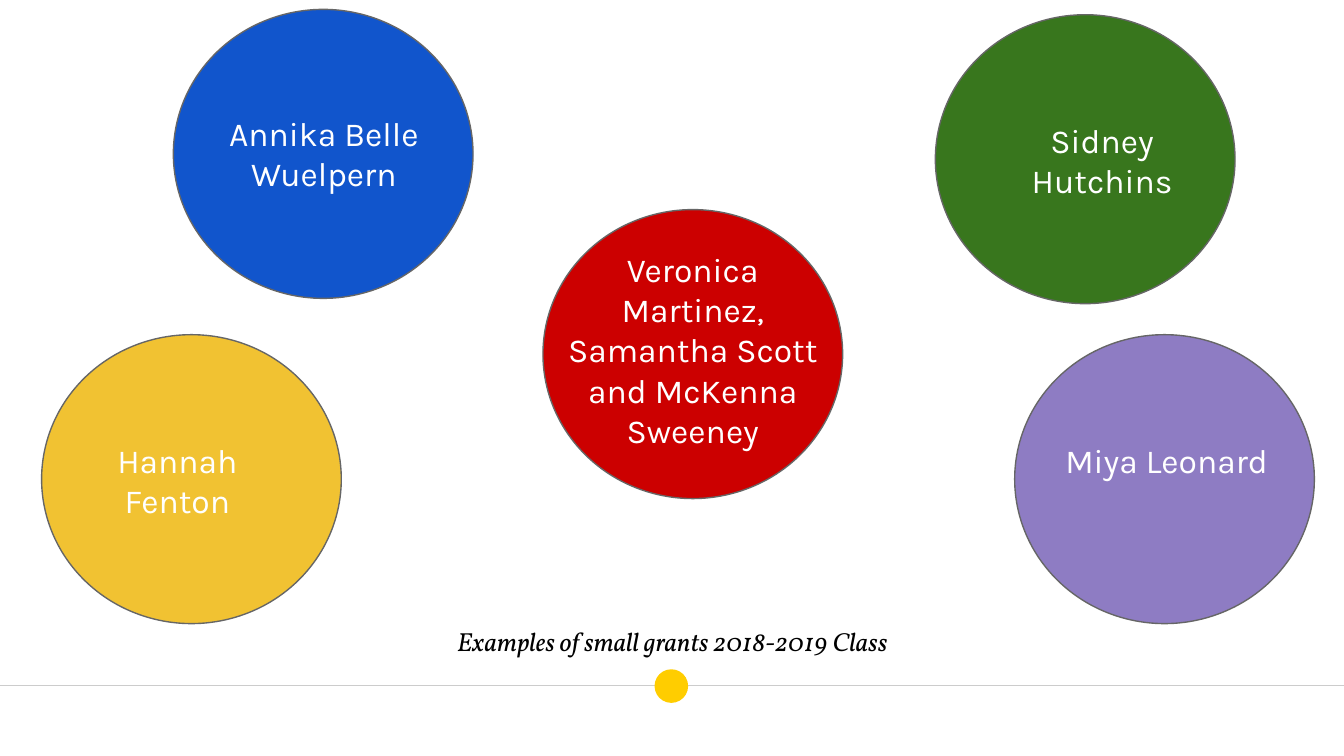
from dataclasses import dataclass

from lxml import etree
from pptx import Presentation
from pptx import util as u
from pptx.dml.color import RGBColor
from pptx.enum import shapes, text
from pptx.oxml import ns

PX = 9144
SLIDE_WIDTH = 1000


@dataclass(frozen=True)
class Theme:
    name_font: str = "Karla"
    caption_font: str = "Vollkorn"
    name_size: int = 18
    caption_size: int = 14
    line_width: float = 0.75
    white: str = "FFFFFF"
    black: str = "000000"
    rule: str = "CCCCCC"
    dot: str = "FFCD00"
    outline: str = "666666"
    blue: str = "1155CC"
    green: str = "38761D"
    red: str = "CC0000"
    yellow: str = "F1C232"
    purple: str = "8E7CC3"


THEME = Theme()
CIRCLE_SIZE = (223, 215)
NAME_SIZE = (172, 80)
GRANTS = [
    ("Annika Belle Wuelpern", THEME.blue, (129, 7), (26, 67), NAME_SIZE, 0),
    ("Sidney Hutchins", THEME.green, (696, 11), (38, 68), NAME_SIZE, 0),
    ("Veronica Martinez, Samantha Scott and McKenna Sweeney",
     THEME.red, (404, 156), (2, 19), (219, 70), 6),
    ("Hannah Fenton", THEME.yellow, (31, 249), (15, 68), NAME_SIZE, 0),
    ("Miya Leonard", THEME.purple, (755, 249), (27, 68), NAME_SIZE, 0),
]


def emu(*lengths):
    return [length * PX for length in lengths]


def color(value):
    return RGBColor.from_string(value)


def add_ellipse(page, box, fill, outline=None):
    ellipse = page.shapes.add_shape(shapes.MSO_SHAPE.OVAL, *emu(*box))
    ellipse.shadow.inherit = False
    ellipse.fill.solid()
    ellipse.fill.fore_color.rgb = color(fill)
    if outline:
        ellipse.line.color.rgb = color(outline)
        ellipse.line.width = u.Pt(THEME.line_width)
    else:
        ellipse.line.fill.background()


def write(frame, words, font, size, ink, anchor, space_before, italic=False):
    frame.word_wrap = True
    frame.auto_size = text.MSO_AUTO_SIZE.NONE
    frame.vertical_anchor = anchor
    inset = 10 * PX
    frame.margin_left = frame.margin_right = inset
    frame.margin_top = frame.margin_bottom = inset
    para = frame.paragraphs[0]
    para.text = words
    para.alignment = text.PP_ALIGN.CENTER
    para.space_before = u.Pt(space_before)
    para.font.name = font
    para.font.size = u.Pt(size)
    para.font.italic = italic
    para.font.color.rgb = color(ink)


def add_footer(page, box):
    left, top, width, height = box
    middle = top + height // 2
    rule = page.shapes.add_connector(
        shapes.MSO_CONNECTOR.STRAIGHT, *emu(left, middle, left + width, middle))
    rule.line.color.rgb = color(THEME.rule)
    rule.line.width = u.Pt(THEME.line_width)
    etree.SubElement(rule.element.spPr, ns.qn("a:effectLst"))
    dot_left = left + (width - height) // 2
    add_ellipse(page, (dot_left, top, height, height), THEME.dot)


def add_caption(page, box, words):
    caption = page.shapes.title
    caption.left, caption.top, caption.width, caption.height = emu(*box)
    write(caption.text_frame, words, THEME.caption_font, THEME.caption_size,
          THEME.black, text.MSO_ANCHOR.BOTTOM, 3.6, italic=True)


def add_name(page, box, words, space_before):
    label = page.shapes.add_textbox(*emu(*box))
    write(label.text_frame, words, THEME.name_font, THEME.name_size,
          THEME.white, text.MSO_ANCHOR.TOP, space_before)


def add_grants(page, box):
    left, top = box[:2]
    for words, fill, (x, y), (dx, dy), size, space_before in GRANTS:
        add_ellipse(page, (left + x, top + y, *CIRCLE_SIZE), fill, THEME.outline)
        name_box = (left + x + dx, top + y + dy, *size)
        add_name(page, name_box, words, space_before)


def main():
    deck = Presentation()
    deck.slide_width = SLIDE_WIDTH * PX
    deck.slide_height = deck.slide_width * 9 // 16
    page = deck.slides.add_slide(deck.slide_layouts.get_by_name("Title Only"))
    page.background.fill.solid()
    page.background.fill.fore_color.rgb = color(THEME.white)
    add_footer(page, (-1, 498, 1002, 25))
    add_caption(page, (218, 442, 565, 57), "Examples of small grants 2018-2019 Class")
    add_grants(page, (0, 0, SLIDE_WIDTH, 464))
    deck.save("out.pptx")


if __name__ == "__main__":
    main()
